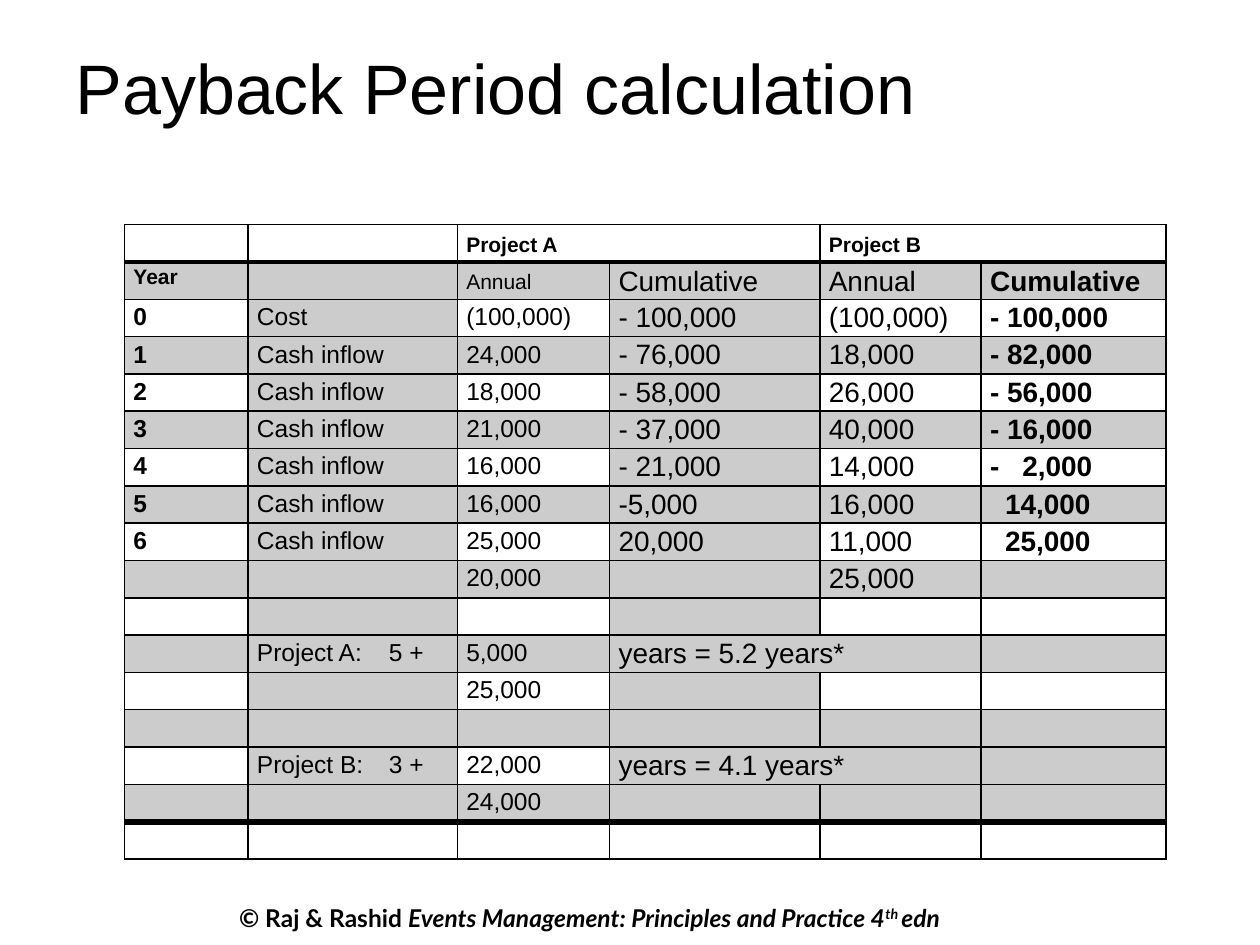
import pptx
import pptx.dml.color
import pptx.enum.text
import pptx.oxml
import pptx.oxml.ns
import pptx.util
import lxml.etree

Cm = pptx.util.Cm
Pt = pptx.util.Pt
qn = pptx.oxml.ns.qn
TOP = pptx.enum.text.MSO_ANCHOR.TOP
MID = pptx.enum.text.MSO_ANCHOR.MIDDLE

WIDTHS = [2.49, 4.22, 3.07, 4.24, 3.25, 3.73]
ROWS = [
    ["", "", "Project A", "", "Project B", ""],
    ["Year", "", "Annual", "Cumulative", "Annual", "Cumulative"],
    ["0", "Cost", "(100,000)", "- 100,000", "(100,000)", "- 100,000"],
    ["1", "Cash inflow", "24,000", "- 76,000", "18,000", "- 82,000"],
    ["2", "Cash inflow", "18,000", "- 58,000", "26,000", "- 56,000"],
    ["3", "Cash inflow", "21,000", "- 37,000", "40,000", "- 16,000"],
    ["4", "Cash inflow", "16,000", "- 21,000", "14,000", "-\t2,000"],
    ["5", "Cash inflow", "16,000", "-5,000", "16,000", "14,000"],
    ["6", "Cash inflow", "25,000", "20,000", "11,000", "25,000"],
    ["", "", "20,000", "", "25,000", ""],
    [""] * 6,
    ["", "Project A:\t5 +", "5,000", "years = 5.2 years*", "", ""],
    ["", "", "25,000", "", "", ""],
    [""] * 6,
    ["", "Project B:\t3 +", "22,000", "years = 4.1 years*", "", ""],
    ["", "", "24,000", "", "", ""],
    [""] * 6,
]
LAST = len(ROWS) - 1
SPANS = [(0, 2), (0, 4), (11, 3), (14, 3)]
TABS = {(6, 5): 0.65, (11, 1): 2.66, (14, 1): 2.66}
DENTS = {(7, 5): 0.3, (8, 5): 0.3}


def tint(hexa):
    """Turn a hex string into a colour."""
    return pptx.dml.color.RGBColor.from_string(hexa)


def write(para, text, size, face="Arial", bold=False, slant=False):
    """Add one formatted run to a paragraph and return it."""
    run = para.add_run()
    run.text = text
    font = run.font
    font.name, font.size, font.bold, font.italic = face, Pt(size), bold, slant
    font.color.rgb = tint("000000")
    return run


def edge(cell, side, width):
    """Draw one black border of a cell."""
    line = lxml.etree.SubElement(
        cell._tc.get_or_add_tcPr(), qn("a:ln" + side), w=str(Pt(width)))
    fill = lxml.etree.SubElement(line, qn("a:solidFill"))
    lxml.etree.SubElement(fill, qn("a:srgbClr"), val="000000")


def shade(cell, grey):
    """Fill a cell with grey, or leave it clear."""
    if grey:
        cell.fill.solid()
        cell.fill.fore_color.rgb = tint("CCCCCC")
    else:
        cell.fill.background()


def is_grey(row, col):
    """Tell whether the banding shades this cell."""
    if row in (0, LAST):
        return False
    return (row % 2 == 1 or col in (1, 3)
            or (row == 14 and col > 2))


def fill_cell(cell, row, col, text):
    """Format one cell and write its text."""
    for side in "LRTB":
        wide = 1
        if (row, side) in ((0, "B"), (1, "T")):
            wide = 2
        elif (row, side) in ((LAST - 1, "B"), (LAST, "T")):
            wide = 4
        edge(cell, side, wide)
    shade(cell, is_grey(row, col))
    cell.margin_left = cell.margin_right = Cm(0.18)
    cell.margin_top = cell.margin_bottom = 0
    cell.vertical_anchor = MID if row == 0 or (row == 1 and col) else TOP
    para = cell.text_frame.paragraphs[0]
    if not text:
        end = lxml.etree.SubElement(para._p, qn("a:endParaRPr"), sz="1200")
        lxml.etree.SubElement(end, qn("a:latin"), typeface="Arial")
        return
    props = para._p.get_or_add_pPr()
    if (row, col) in TABS:
        stops = lxml.etree.SubElement(props, qn("a:tabLst"))
        lxml.etree.SubElement(stops, qn("a:tab"),
                              pos=str(Cm(TABS[row, col])), algn="l")
    if (row, col) in DENTS:
        props.set("marL", str(Cm(DENTS[row, col])))
    size = 12 if row == 0 else 16 if col > 2 else 12 if row == 1 else 14
    para.line_spacing = 1.1 if size == 16 else 1.15
    write(para, text, size, bold=row == 0 or col == 5 or col == 0)


def add_grid(slide, left, top, width, height):
    """Place the payback table in its box."""
    grid = slide.shapes.add_table(
        len(ROWS), len(WIDTHS), Cm(left), Cm(top), Cm(width), Cm(height)).table
    grid.first_row = grid.horz_banding = False
    for col, wide in zip(grid.columns, WIDTHS):
        col.width = Cm(wide)
    for row, texts in enumerate(ROWS):
        for col, text in enumerate(texts):
            fill_cell(grid.cell(row, col), row, col, text)
    for row, col in SPANS:
        grid.cell(row, col).merge(grid.cell(row, col + 1))


def add_title(slide, left, top, width, height):
    """Place the slide title in its box."""
    title = slide.shapes.title
    title.left, title.top = Cm(left), Cm(top)
    title.width, title.height = Cm(width), Cm(height)
    frame = title.text_frame
    frame.vertical_anchor = TOP
    frame.margin_top = Cm(0.14)
    para = frame.paragraphs[0]
    para.alignment = pptx.enum.text.PP_ALIGN.LEFT
    write(para, "Payback Period calculation", 40)


def add_foot(slide, left, top, width, height):
    """Place the source line in its box."""
    box = slide.shapes.add_textbox(Cm(left), Cm(top), Cm(width), Cm(height))
    box.text_frame.word_wrap = False
    para = box.text_frame.paragraphs[0]
    write(para, "© Raj & Rashid ", 14, "Lato", True)
    write(para, "Events Management: Principles and Practice 4", 14, "Lato", True, True)
    power = write(para, "th ", 14, "Lato", True, True)
    power._r.get_or_add_rPr().set("baseline", "30000")
    write(para, "edn", 14, "Lato", True, True)


def main():
    """Build the slide and save it."""
    deck = pptx.Presentation()
    deck.slide_width, deck.slide_height = Cm(25.4), Cm(19.05)
    slide = deck.slides.add_slide(deck.slide_layouts[5])
    add_foot(slide, 4.57, 18.07, 17.7, 0.86)
    add_title(slide, 1.27, 0.76, 22.86, 2.74)
    add_grid(slide, 2.51, 4.53, 21, 12.8)
    deck.save("out.pptx")


if __name__ == "__main__":
    main()
